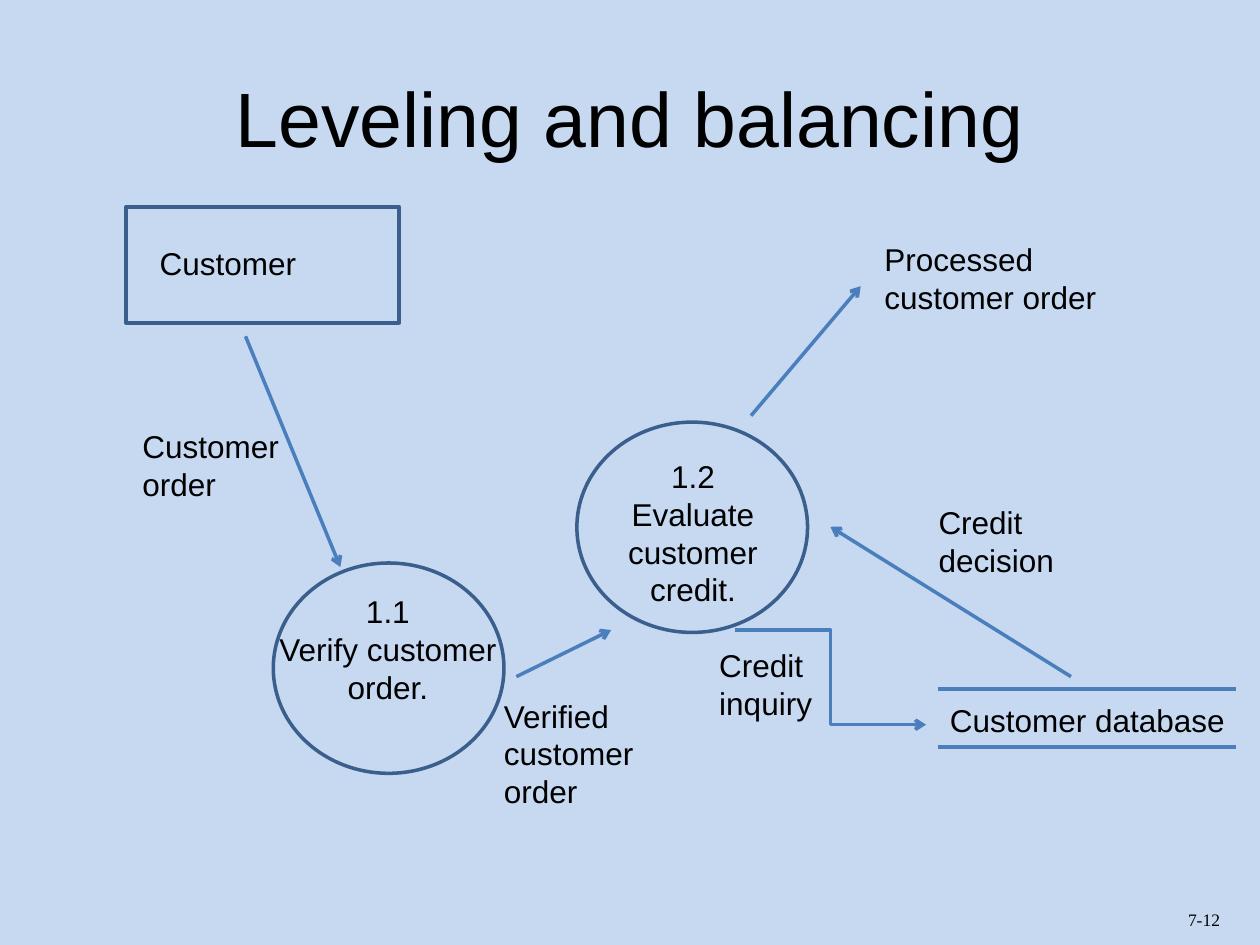
from dataclasses import dataclass

from lxml.etree import SubElement
from pptx import Presentation
from pptx.dml.color import RGBColor
from pptx.enum.shapes import MSO_CONNECTOR, MSO_SHAPE
from pptx.enum.text import MSO_ANCHOR, PP_ALIGN
from pptx.oxml.ns import qn
from pptx.util import Cm, Pt


@dataclass(frozen=True)
class Theme:
    background: RGBColor = RGBColor(0xC6, 0xD9, 0xF1)
    text: RGBColor = RGBColor(0, 0, 0)
    outline: RGBColor = RGBColor(0x3A, 0x5F, 0x8C)
    flow: RGBColor = RGBColor(0x4B, 0x7E, 0xBC)
    font: str = "Arial"
    number_font: str = "Times New Roman"
    title_size: int = 44
    body_size: int = 18
    number_size: int = 10
    line_width: int = 2


THEME = Theme()


# All positions and sizes below are in centimetres.
@dataclass(frozen=True)
class Label:
    text: str
    left: float
    top: float
    height: float = 1.8
    width: float = 4.88
    align: PP_ALIGN = PP_ALIGN.LEFT


@dataclass(frozen=True)
class Node:
    kind: MSO_SHAPE
    left: float
    top: float
    width: float
    height: float
    label: Label


@dataclass(frozen=True)
class Flow:
    start: tuple[float, float]
    end: tuple[float, float]
    kind: MSO_CONNECTOR = MSO_CONNECTOR.STRAIGHT
    arrow: bool = True


def process(left: float, top: float, label: Label) -> Node:
    return Node(MSO_SHAPE.OVAL, left, top, 4.65, 4.24, label)


NODES = [
    Node(MSO_SHAPE.RECTANGLE, 2.54, 4.17, 5.51, 2.34,
         Label("Customer", 2.97, 4.8, 1.02)),
    process(5.51, 11.35, Label("1.1\nVerify customer order.", 5.38, 11.81,
                               3.33, align=PP_ALIGN.CENTER)),
    process(11.63, 8.51, Label("1.2\nEvaluate customer credit.", 11.53, 9.09,
                               3.33, align=PP_ALIGN.CENTER)),
]

FLOW_LABELS = [
    Label("Customer\norder", 2.62, 8.48),
    Label("Verified customer\norder", 9.91, 13.92, 2.57),
    Label("Credit\ninquiry", 14.25, 12.9),
    Label("Credit\ndecision", 18.67, 10.01),
    Label("Processed customer order", 17.58, 4.72),
]

FLOWS = [
    Flow((4.95, 6.78), (6.86, 11.43)),
    Flow((10.41, 13.64), (12.32, 12.7)),
    Flow((21.59, 13.64), (16.74, 10.62)),
    Flow((15.14, 8.38), (17.35, 5.77)),
    Flow((14.81, 12.7), (18.67, 14.61), MSO_CONNECTOR.ELBOW),
]

STORE_LABEL = Label("Customer database", 18.9, 14.0, 1.02, 6.3)
STORE_RIGHT = 24.92
STORE_RULES = (13.89, 15.06)


def write_text(frame, text: str, *, size: int = THEME.body_size,
               font: str = THEME.font, align: PP_ALIGN = PP_ALIGN.LEFT,
               anchor: MSO_ANCHOR = MSO_ANCHOR.TOP) -> None:
    frame.word_wrap = True
    frame.vertical_anchor = anchor
    frame.text = text
    for paragraph in frame.paragraphs:
        paragraph.alignment = align
        for run in paragraph.runs:
            run.font.size = Pt(size)
            run.font.name = font
            run.font.color.rgb = THEME.text


def draw_label(slide, label: Label, **text_format) -> None:
    box = slide.shapes.add_textbox(Cm(label.left), Cm(label.top),
                                   Cm(label.width), Cm(label.height))
    write_text(box.text_frame, label.text, align=label.align, **text_format)


def draw_node(slide, node: Node) -> None:
    outline = slide.shapes.add_shape(node.kind, Cm(node.left), Cm(node.top),
                                     Cm(node.width), Cm(node.height))
    outline.shadow.inherit = False
    outline.fill.background()
    outline.line.color.rgb = THEME.outline
    outline.line.width = Pt(THEME.line_width)
    draw_label(slide, node.label)


def draw_flow(slide, flow: Flow) -> None:
    connector = slide.shapes.add_connector(
        flow.kind, *(Cm(value) for value in flow.start + flow.end))
    connector.line.color.rgb = THEME.flow
    connector.line.width = Pt(THEME.line_width)
    properties = connector._element.spPr
    if flow.arrow:
        SubElement(properties.find(qn("a:ln")), qn("a:tailEnd"), type="arrow")
    SubElement(properties, qn("a:effectLst"))


def main() -> None:
    deck = Presentation()
    deck.slide_width, deck.slide_height = Cm(25.4), Cm(19.05)
    slide = deck.slides.add_slide(deck.slide_layouts[5])
    slide.background.fill.solid()
    slide.background.fill.fore_color.rgb = THEME.background

    # Title
    title = slide.shapes.title
    title.left, title.top = Cm(1.27), Cm(0.76)
    title.width, title.height = Cm(22.86), Cm(3.18)
    write_text(title.text_frame, "Leveling and balancing",
               size=THEME.title_size, align=PP_ALIGN.CENTER,
               anchor=MSO_ANCHOR.MIDDLE)

    # Customer and the two processes
    for node in NODES:
        draw_node(slide, node)

    # Data store between two rules
    for height in STORE_RULES:
        draw_flow(slide, Flow((STORE_LABEL.left, height),
                              (STORE_RIGHT, height), arrow=False))
    draw_label(slide, STORE_LABEL)

    # Data flows and their names
    for flow in FLOWS:
        draw_flow(slide, flow)
    for label in FLOW_LABELS:
        draw_label(slide, label)

    # Page number
    draw_label(slide, Label("7-12", 23.7, 18.19, 0.69, 1.7),
               size=THEME.number_size, font=THEME.number_font)

    deck.save("out.pptx")


if __name__ == "__main__":
    main()
